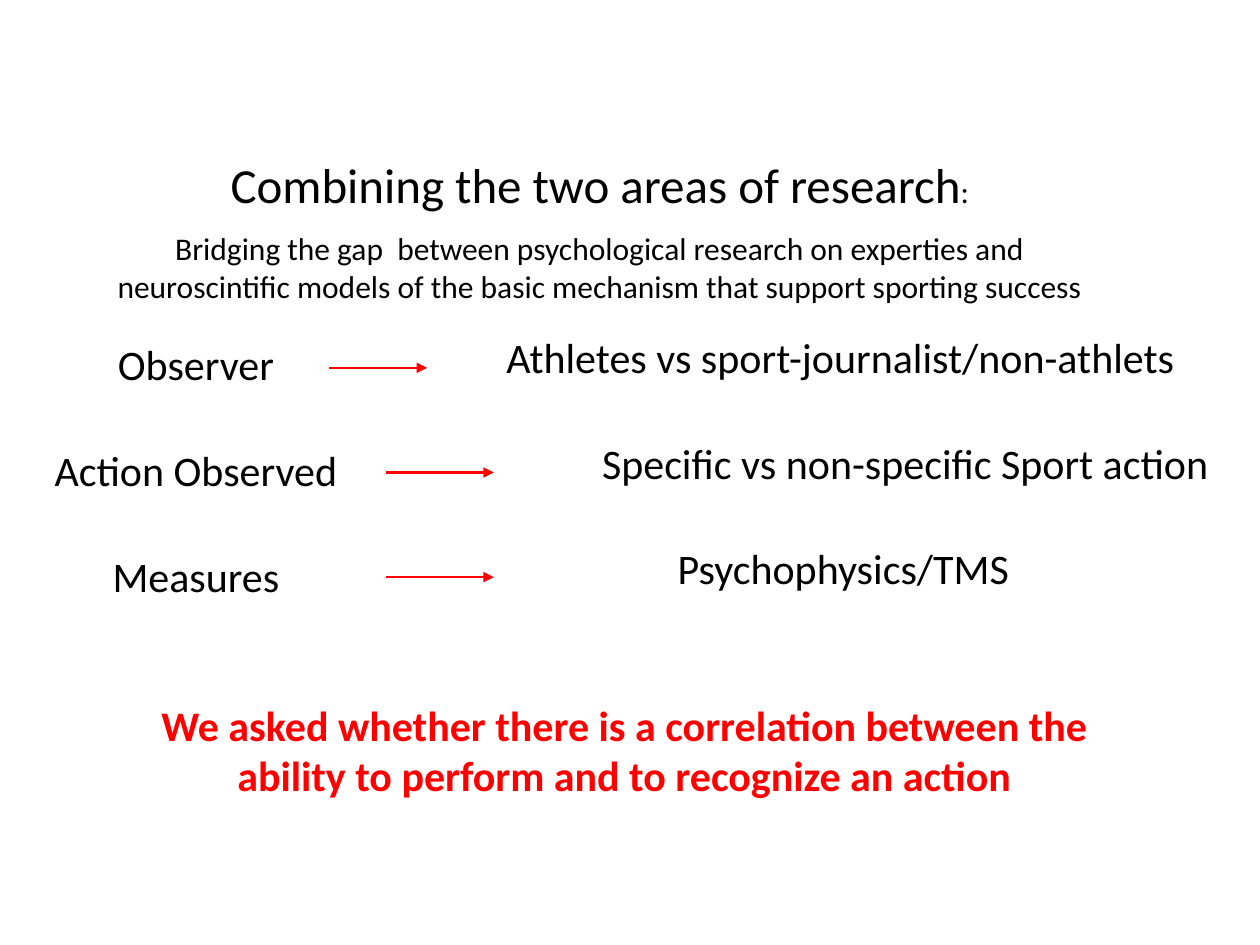
"""Build the slide that pairs each research area with what was compared."""
from lxml.etree import SubElement
from pptx import Presentation
from pptx.dml.color import RGBColor
from pptx.enum.shapes import MSO_CONNECTOR, MSO_SHAPE
from pptx.enum.text import MSO_ANCHOR, PP_ALIGN
from pptx.oxml.ns import qn
from pptx.util import Emu, Pt

EMU_PER_PX = 9144
COLOURS = {"text": "000000", "accent": "FF0000", "paper": "FFFFFF"}
ROWS = [
    ("Observer", 261, 339, "Athletes vs sport-journalist/non-athlets", 392, 597),
    ("Action Observed", 306, 392, "Specific vs non-specific Sport action", 468, 521),
    ("Measures", 306, 392, "Psychophysics/TMS", 528, 460),
]


def px(*lengths):
    return [Emu(length * EMU_PER_PX) for length in lengths]


def add_text(paragraph, text, size=24, colour="text", bold=False, align=PP_ALIGN.CENTER):
    paragraph.alignment = align
    run = paragraph.add_run()
    run.text = text
    run.font.name = "Calibri"
    run.font.size = Pt(size)
    run.font.bold = bold
    run.font.color.rgb = RGBColor.from_string(COLOURS[colour])


class SlideBuilder:
    def __init__(self, slide):
        self.slide = slide

    def text_box(self, left, top, width, height):
        frame = self.slide.shapes.add_textbox(*px(left, top, width, height)).text_frame
        frame.word_wrap = True
        return frame

    def label(self, text, left, top, width, height):
        shape = self.slide.shapes.add_shape(MSO_SHAPE.RECTANGLE, *px(left, top, width, height))
        shape.shadow.inherit = False
        shape.fill.background()
        shape.line.color.rgb = RGBColor.from_string(COLOURS["paper"])
        shape.line.width = Pt(0.75)
        shape.text_frame.vertical_anchor = MSO_ANCHOR.MIDDLE
        add_text(shape.text_frame.paragraphs[0], text)

    def arrow(self, start, end, y):
        connector = self.slide.shapes.add_connector(MSO_CONNECTOR.STRAIGHT, *px(start, y, end, y))
        connector.line.color.rgb = RGBColor.from_string(COLOURS["accent"])
        connector.line.width = Pt(1.5)
        SubElement(connector.line._get_or_add_ln(), qn("a:tailEnd"), type="triangle")
        SubElement(connector._element.spPr, qn("a:effectLst"))


def main():
    presentation = Presentation()
    presentation.slide_width, presentation.slide_height = px(1000, 750)
    builder = SlideBuilder(presentation.slides.add_slide(presentation.slide_layouts[6]))

    heading = builder.text_box(72, 118, 808, 133)
    title = heading.paragraphs[0]
    add_text(title, "Combining the two areas of research", size=28)
    add_text(title, ":", size=18)
    subtitle = heading.add_paragraph()
    subtitle.space_before = Pt(9)
    add_text(subtitle, "Bridging the gap  between psychological research on experties and "
             "neuroscintific models of the basic mechanism that support sporting success", size=18)

    for index, (topic, start, end, comparison, left, width) in enumerate(ROWS):
        builder.label(topic, 17, 259 + 84 * index, 277, 59)
        builder.arrow(start, end, 292 + 83 * index)
        answer = builder.text_box(left, 258 + 84 * index, width, 51)
        add_text(answer.paragraphs[0], comparison, align=PP_ALIGN.LEFT)

    question = builder.text_box(83, 550, 825, 91)
    add_text(question.paragraphs[0], "We asked whether there is a correlation between the "
             "ability to perform and to recognize an action", colour="accent", bold=True)
    presentation.save("out.pptx")


if __name__ == "__main__":
    main()
